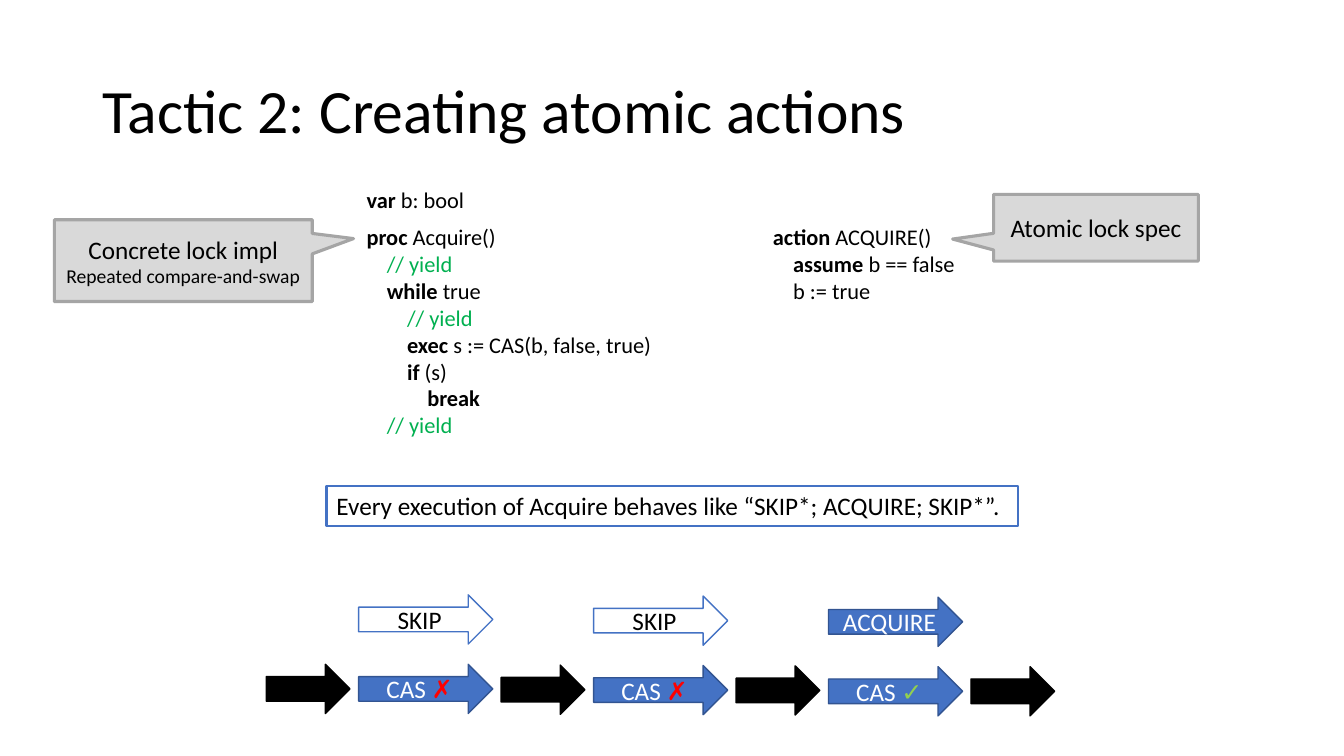
from pptx import Presentation
from pptx.dml.color import RGBColor
from pptx.enum.shapes import MSO_SHAPE
from pptx.enum.text import MSO_ANCHOR, MSO_AUTO_SIZE, PP_ALIGN
from pptx.util import Cm, Pt

BLACK, WHITE, BLUE, NAVY = "000000", "FFFFFF", "4472C4", "325491"
RED, LIME, GREEN = "FF0000", "92D050", "00B050"
LIGHT_GRAY, GRAY = "D9D9D9", "A5A5A5"
INDENT = 0.51


def rgb(value):
    return RGBColor.from_string(value)


def apply(target, values):
    for name, value in values.items():
        setattr(target, name, value)


def line(*runs, level=0, **paragraph_format):
    """One paragraph; each run is a (text, font format) pair."""
    return runs, level, paragraph_format


def plain(text, **font):
    return text, font


def bold(text):
    return text, {"bold": True}


def comment(level):
    return line(plain("// yield", color=GREEN), level=level)


class SlideBuilder:
    """Holds the style and the current slide."""

    font = {"name": "Calibri", "size": Pt(18), "bold": False}

    def __init__(self, prs):
        self.shapes = prs.slides.add_slide(prs.slide_layouts[6]).shapes

    def fill_text(self, s, lines, frame, font, **paragraph_format):
        tf = s.text_frame
        apply(tf, {"word_wrap": True, **frame})
        for i, (runs, level, own_format) in enumerate(lines):
            p = tf.paragraphs[0] if i == 0 else tf.add_paragraph()
            apply(p, {**paragraph_format, **own_format})
            if level:
                p._p.get_or_add_pPr().set("marL", str(Cm(INDENT * level)))
            for text, own_font in runs:
                r = p.add_run()
                r.text = text
                values = {**self.font, "color": BLACK, **font, **own_font}
                r.font.color.rgb = rgb(values.pop("color"))
                apply(r.font, values)

    def text(self, box, lines, frame, **font):
        s = self.shapes.add_textbox(*map(Cm, box))
        self.fill_text(s, lines, frame, font)

    def shape(self, kind, box, fill, outline, width=1):
        s = self.shapes.add_shape(kind, *map(Cm, box))
        s.shadow.inherit = False
        s.fill.solid()
        s.fill.fore_color.rgb = rgb(fill)
        s.line.color.rgb = rgb(outline)
        s.line.width = Pt(width)
        return s

    def code(self, box, lines):
        self.text(box, lines, {"auto_size": MSO_AUTO_SIZE.SHAPE_TO_FIT_TEXT},
                  size=Pt(16))

    def statement(self, box, text):
        s = self.shape(MSO_SHAPE.RECTANGLE, box, WHITE, BLUE, 1.5)
        frame = {"word_wrap": False, "vertical_anchor": MSO_ANCHOR.TOP,
                 "auto_size": MSO_AUTO_SIZE.SHAPE_TO_FIT_TEXT}
        self.fill_text(s, [line(plain(text))], frame, {}, alignment=PP_ALIGN.LEFT)

    def label(self, s, lines, **font):
        self.fill_text(s, lines, {"vertical_anchor": MSO_ANCHOR.MIDDLE}, font,
                       alignment=PP_ALIGN.CENTER)

    def arrow(self, box, fill, outline, *runs, **font):
        s = self.shape(MSO_SHAPE.RIGHT_ARROW, box, fill, outline)
        if runs:
            self.label(s, [line(*runs)], **font)

    def callout(self, box, tip, lines):
        s = self.shape(MSO_SHAPE.RECTANGULAR_CALLOUT, box, LIGHT_GRAY, GRAY, 2.25)
        s.adjustments[0], s.adjustments[1] = tip
        self.label(s, lines)


def draw_code(slide):
    slide.code((8.99, 4.57, 8.13, 6.68), [
        line(bold("var"), plain(" b: bool")),
        line(bold("proc"), plain(" Acquire()"), space_before=Pt(7.3)),
        comment(1),
        line(bold("while"), plain(" true"), level=1),
        comment(2),
        line(bold("exec "), plain("s := CAS(b, false, true)"), level=2),
        line(bold("if"), plain(" (s)"), level=2),
        line(bold("break"), level=3),
        comment(1),
    ])
    slide.code((19.23, 5.51, 5.64, 2.31), [
        line(bold("action "), plain("ACQUIRE()")),
        line(bold("assume "), plain("b == false"), level=1),
        line(plain("b := true"), level=1),
    ])


def draw_execution(slide):
    step, height, drop = 5.92, 1.24, 0.03
    spec_top, impl_top = 14.99, 16.74
    skip = "SKIP", WHITE, BLUE, BLACK
    acquire = "ACQUIRE", BLUE, NAVY, WHITE
    stages = [(skip, "✗", RED), (skip, "✗", RED), (acquire, "✓", LIME)]

    for i, ((name, fill, outline, color), mark, mark_color) in enumerate(stages):
        x, shift = 9.04 + i * step, i * drop
        slide.arrow((x, impl_top + shift, 3.38, height), BLUE, NAVY,
                    plain("CAS "), plain(mark, color=mark_color), color=WHITE)
        slide.arrow((x, spec_top + shift, 3.38, height), fill, outline,
                    plain(name), color=color)
    for i in range(len(stages) + 1):
        slide.arrow((6.71 + i * step, impl_top + i * 0.02, 2.11, height),
                    BLACK, BLACK)


def main():
    prs = Presentation()
    apply(prs, {"slide_width": Cm(33.87), "slide_height": Cm(19.05)})
    slide = SlideBuilder(prs)
    slide.text((2.34, 1.02, 29.21, 3.68),
               [line(plain("Tactic 2: Creating atomic actions"), line_spacing=0.9)],
               {"vertical_anchor": MSO_ANCHOR.MIDDLE}, size=Pt(44))
    draw_code(slide)
    slide.statement((8.23, 12.24, 17.42, 1.02),
                    "Every execution of Acquire behaves like “SKIP*; ACQUIRE; SKIP*”.")
    draw_execution(slide)
    slide.callout((1.37, 5.54, 6.5, 2.06), (0.66, -0.27), [
        line(plain("Concrete lock impl")),
        line(plain("Repeated compare-and-swap", size=Pt(14))),
    ])
    slide.callout((25.04, 4.9, 5.16, 1.68), (-0.7, 0.17),
                  [line(plain("Atomic lock spec"))])
    prs.save("out.pptx")


if __name__ == "__main__":
    main()
